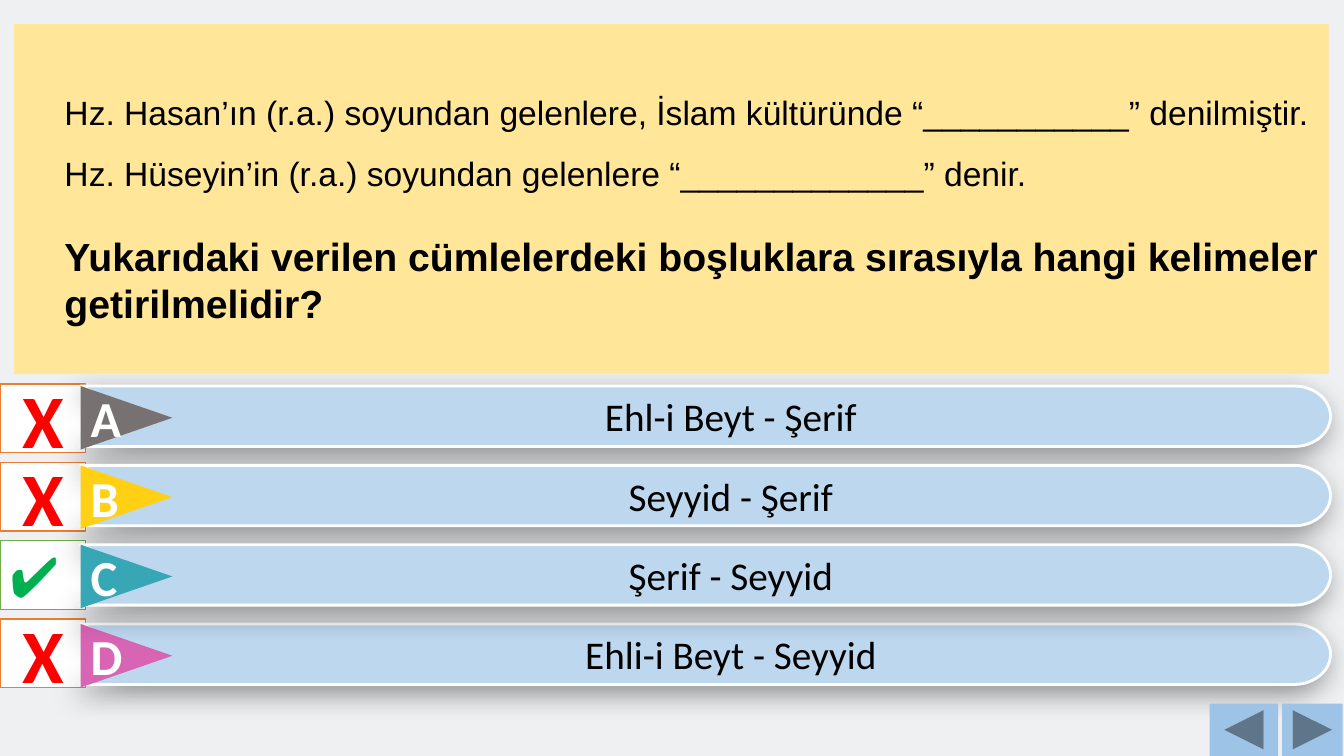
from dataclasses import dataclass
from math import cos, pi, sin

from lxml.etree import SubElement
from pptx import Presentation
from pptx.dml.color import RGBColor
from pptx.enum.shapes import MSO_SHAPE
from pptx.enum.text import MSO_ANCHOR, PP_ALIGN
from pptx.oxml.ns import qn
from pptx.util import Inches, Pt

CELL = Inches(0.1)
COLUMNS, ROWS = 133.33, 75


@dataclass(frozen=True)
class Theme:
    """Colours, fonts and type sizes of the quiz."""
    background: str = "EEF0F2"
    question: str = "FFE699"
    answer: str = "BDD7EE"
    button: str = "9DC3E6"
    white: str = "FFFFFF"
    black: str = "000000"
    wrong: str = "FF0000"
    wrong_line: str = "ED7D31"
    right: str = "00B050"
    right_line: str = "70AD47"
    question_font: str = "Arial"
    answer_font: str = "Calibri"
    statement_size: int = 24
    main_size: int = 28
    letter_size: int = 36
    check_size: int = 40
    cross_size: int = 54


@dataclass(frozen=True)
class Box:
    """A region measured in grid columns and rows."""
    left: float
    top: float
    width: float
    height: float

    def emu(self):
        """Return the region in slide units."""
        return [round(value * CELL) for value in (self.left, self.top, self.width, self.height)]


THEME = Theme()
STATEMENTS = (
    "Hz. Hasan’ın (r.a.) soyundan gelenlere, İslam kültüründe “___________” denilmiştir.",
    "Hz. Hüseyin’in (r.a.) soyundan gelenlere “_____________” denir.",
)
QUESTION = "Yukarıdaki verilen cümlelerdeki boşluklara sırasıyla hangi kelimeler getirilmelidir?"
ANSWERS = (
    (0, "A", "Ehl-i Beyt - Şerif", "777171"),
    (1, "B", "Seyyid - Şerif", "FFD013"),
    (3, "D", "Ehli-i Beyt - Seyyid", "D864B4"),
    (2, "C", "Şerif - Seyyid", "38A7B5"),
)
CORRECT_ROW = 2


def paint(shape, fill, line=None, width=1):
    """Set fill and outline and drop the theme shadow."""
    shape.shadow.inherit = False
    shape.fill.solid()
    shape.fill.fore_color.rgb = RGBColor.from_string(fill)
    if line:
        shape.line.color.rgb = RGBColor.from_string(line)
        shape.line.width = Pt(width)
    else:
        shape.line.fill.background()


def add_shape(shapes, kind, box, fill, line=None):
    """Add a painted preset shape."""
    shape = shapes.add_shape(kind, *box.emu())
    paint(shape, fill, line)
    return shape


def write(paragraph, text, size, color, font, bold=False, align=PP_ALIGN.CENTER, indent=0):
    """Write one run into a paragraph."""
    paragraph.alignment = align
    if indent:
        paragraph._p.get_or_add_pPr().set("marL", str(Inches(indent)))
    run = paragraph.add_run()
    run.text = text
    run.font.size = Pt(size)
    run.font.name = font
    run.font.bold = bold
    run.font.color.rgb = RGBColor.from_string(color)


def cast_shadow(shape):
    """Give a shape a soft shadow to the lower left."""
    effects = shape._element.spPr.find(qn("a:effectLst"))
    shadow = SubElement(effects, qn("a:outerShdw"), blurRad=str(Pt(20)), dist=str(Pt(7)),
                        dir=str(135 * 60000), algn="tr", rotWithShape="0")
    color = SubElement(shadow, qn("a:srgbClr"), val=THEME.black)
    SubElement(color, qn("a:alpha"), val="40000")


def add_question(slide, box):
    """Place the panel with the statements and the question."""
    panel = add_shape(slide.shapes, MSO_SHAPE.RECTANGLE, box, THEME.question)
    frame = panel.text_frame
    frame.word_wrap = True
    frame.vertical_anchor = MSO_ANCHOR.MIDDLE
    frame.margin_left = frame.margin_right = frame.margin_top = frame.margin_bottom = 0
    for index, statement in enumerate(STATEMENTS):
        paragraph = frame.add_paragraph() if index else frame.paragraphs[0]
        paragraph.line_spacing = 1.5
        write(paragraph, statement, THEME.statement_size, THEME.black, THEME.question_font,
              align=PP_ALIGN.LEFT, indent=0.5)
    paragraph = frame.add_paragraph()
    paragraph.space_before = Pt(28)
    write(paragraph, QUESTION, THEME.main_size, THEME.black, THEME.question_font,
          bold=True, align=PP_ALIGN.LEFT, indent=0.5)


def add_mark(slide, box, correct):
    """Place the tick or cross beside an answer."""
    line = THEME.right_line if correct else THEME.wrong_line
    mark = add_shape(slide.shapes, MSO_SHAPE.RECTANGLE, box, THEME.white, line)
    mark.text_frame.vertical_anchor = MSO_ANCHOR.MIDDLE
    paragraph = mark.text_frame.paragraphs[0]
    if correct:
        write(paragraph, "✔", THEME.check_size, THEME.right, THEME.answer_font, align=PP_ALIGN.LEFT)
    else:
        write(paragraph, "X", THEME.cross_size, THEME.wrong, THEME.answer_font, bold=True)


def add_answer(slide, box, letter, text, color):
    """Place a notched, round-ended answer bar with its letter arrow."""
    shapes = slide.shapes.add_group_shape().shapes
    left, top, width, height = box.emu()
    radius_x, radius_y = 0.6 * height, height / 2
    center_x, center_y = left + width - radius_x, top + radius_y
    steps = 24
    angles = [pi * step / steps - pi / 2 for step in range(steps + 1)]
    curve = [(round(center_x + radius_x * cos(angle)), round(center_y + radius_y * sin(angle)))
             for angle in angles]
    notch = (left + round(1.04 * height), round(center_y))
    builder = shapes.build_freeform(left, top)
    builder.add_line_segments(curve + [(left, top + height), notch], close=True)
    bar = builder.convert_to_shape()
    paint(bar, THEME.answer, THEME.white, 2)
    cast_shadow(bar)
    bar.text_frame.word_wrap = True
    bar.text_frame.vertical_anchor = MSO_ANCHOR.MIDDLE
    write(bar.text_frame.paragraphs[0], text, THEME.main_size, THEME.black,
          THEME.answer_font, indent=0.5)

    base, length = 6.3, 9.1
    arrow_box = Box(box.left + (length - base) / 2,
                    box.top + (box.height - length) / 2 + 0.15, base, length)
    arrow = add_shape(shapes, MSO_SHAPE.ISOSCELES_TRIANGLE, arrow_box, color)
    arrow.rotation = 90
    arrow.text_frame.vertical_anchor = MSO_ANCHOR.MIDDLE
    arrow.text_frame._txBody.bodyPr.set("vert", "vert270")
    write(arrow.text_frame.paragraphs[0], letter, THEME.letter_size, THEME.white,
          THEME.answer_font, bold=True)


def add_navigation(slide, box):
    """Place the previous and next buttons."""
    previous = Box(box.left, box.top, 6.8, box.height)
    following = Box(box.left + 7.2, box.top, box.width - 7.2, box.height)
    add_shape(slide.shapes, MSO_SHAPE.ACTION_BUTTON_BACK_OR_PREVIOUS, previous, THEME.button)
    add_shape(slide.shapes, MSO_SHAPE.ACTION_BUTTON_FORWARD_OR_NEXT, following, THEME.button)


def main():
    """Build and save the quiz slide."""
    presentation = Presentation()
    presentation.slide_width = round(COLUMNS * CELL)
    presentation.slide_height = ROWS * CELL
    slide = presentation.slides.add_slide(presentation.slide_layouts[6])
    slide.background.fill.solid()
    slide.background.fill.fore_color.rgb = RGBColor.from_string(THEME.background)
    for row in range(len(ANSWERS)):
        add_mark(slide, Box(0, 38.1 + 7.77 * row, 8.5, 6.8), row == CORRECT_ROW)
    for row, letter, text, color in ANSWERS:
        add_answer(slide, Box(8, 38.3 + 7.87 * row, 124, 6), letter, text, color)
    add_question(slide, Box(1.4, 2.4, 130.4, 34.7))
    add_navigation(slide, Box(120, 69.8, 13.2, 5.2))
    presentation.save("out.pptx")


if __name__ == "__main__":
    main()
